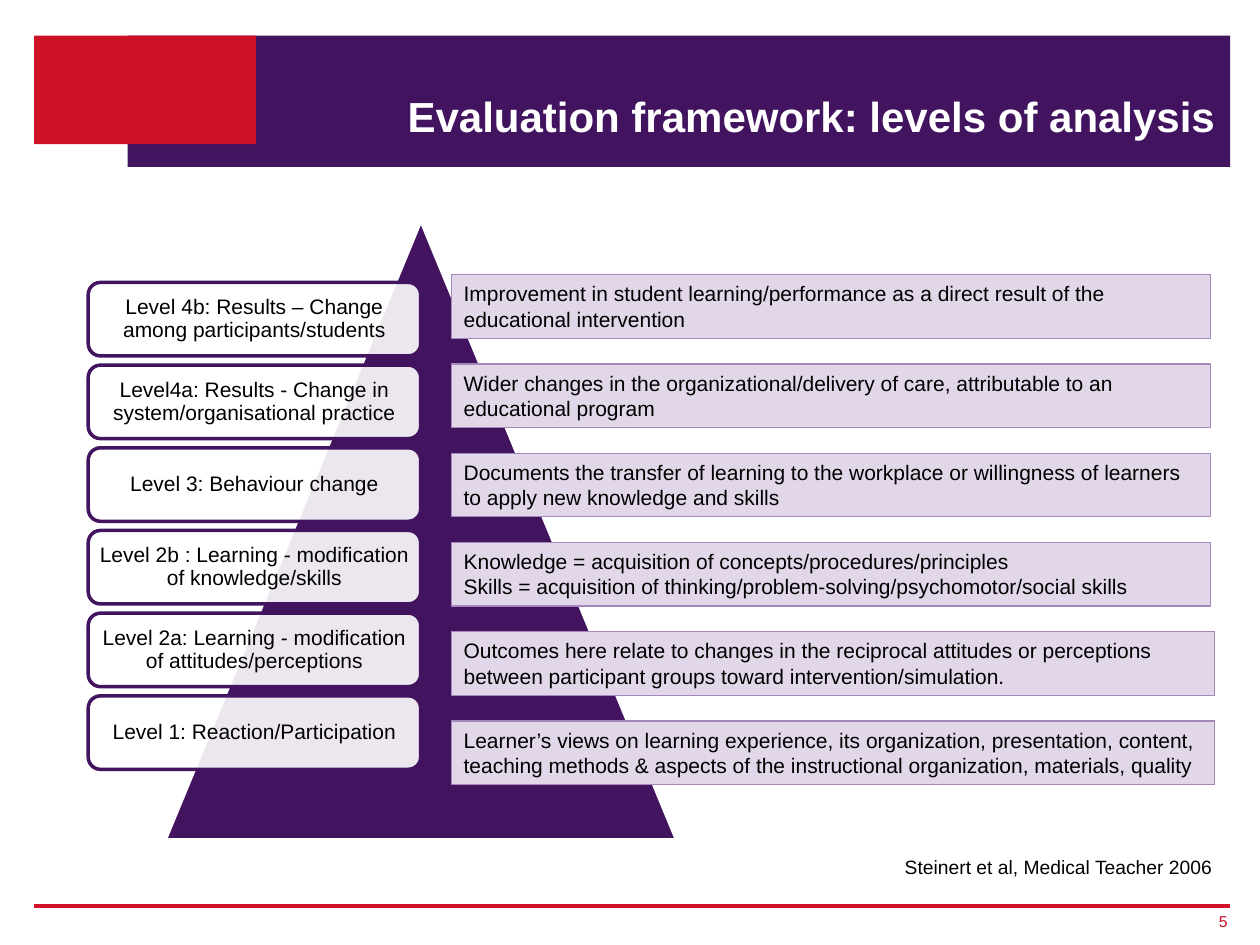
from lxml import etree
from pptx import Presentation
from pptx.dml.color import RGBColor
from pptx.enum import shapes, text
from pptx.oxml import ns
from pptx.util import Pt

HUES = {"plum": "42145F", "red": "CE1126", "lilac": "E1D7E8",
        "mauve": "A587B9", "white": "FFFFFF", "black": "000000"}
KIND = shapes.MSO_SHAPE
ALIGN = text.PP_ALIGN
MID = text.MSO_ANCHOR.MIDDLE
LEVELS = [
    ("Level 4b: Results – Change among participants/students",
     ["Improvement in student learning/performance as a direct result of the educational intervention"]),
    ("Level4a: Results - Change in system/organisational practice",
     ["Wider changes in the organizational/delivery of care, attributable to an educational program"]),
    ("Level 3: Behaviour change",
     ["Documents the transfer of learning to the workplace or willingness of learners to apply new knowledge and skills"]),
    ("Level 2b : Learning - modification of knowledge/skills",
     ["Knowledge = acquisition of concepts/procedures/principles",
      "Skills = acquisition of thinking/problem-solving/psychomotor/social skills"]),
    ("Level 2a: Learning - modification of attitudes/perceptions",
     ["Outcomes here relate to changes in the reciprocal attitudes or perceptions between participant groups toward intervention/simulation."]),
    ("Level 1: Reaction/Participation",
     ["Learner’s views on learning experience, its organization, presentation, content, teaching methods & aspects of the instructional organization, materials, quality"]),
]


def color(name):
    return RGBColor.from_string(HUES[name])


def block(slide, kind, box, fill, edge=None, width=0):
    shape = slide.shapes.add_shape(kind, *map(Pt, box))
    shape.shadow.inherit = False
    shape.fill.solid()
    shape.fill.fore_color.rgb = color(fill)
    if edge:
        shape.line.color.rgb = color(edge)
        shape.line.width = Pt(width)
    else:
        shape.line.fill.background()
    return shape


def write(shape, lines, size=12, hue="black", align=ALIGN.LEFT, anchor=text.MSO_ANCHOR.TOP,
          inset=None, space=None, bold=False):
    frame = shape.text_frame
    frame.word_wrap = True
    frame.vertical_anchor = anchor
    if inset is not None:
        frame.margin_left = frame.margin_right = Pt(inset)
        frame.margin_top = frame.margin_bottom = Pt(inset)
    frame.text = "\n".join(lines)
    for para in frame.paragraphs:
        para.alignment = align
        if space:
            para.line_spacing = space
        font = para.font
        font.name, font.size, font.bold = "Arial", Pt(size), bold
        font.color.rgb = color(hue)


def label(slide, box, line, **style):
    write(slide.shapes.add_textbox(*map(Pt, box)), [line], align=ALIGN.RIGHT, **style)


def header(slide, box):
    x, y, w, h = box
    block(slide, KIND.RECTANGLE, (x + 53.5, y, w - 53.5, h), "plum")
    block(slide, KIND.RECTANGLE, (x, y, 126.7, 62), "red")
    label(slide, (x + 128, y + 13.5, w - 129.5, 50), "Evaluation framework: levels of analysis",
          size=24, hue="white", anchor=text.MSO_ANCHOR.BOTTOM, space=Pt(25), bold=True)


def pyramid(slide, box):
    x, y, w, h = box
    block(slide, KIND.ISOSCELES_TRIANGLE, (x + 44, y, 292.3, h), "plum", "white", 2)
    for i, (name, notes) in enumerate(LEVELS):
        card = block(slide, KIND.ROUNDED_RECTANGLE, (x, y + 35.4 + i * 47.25, 190, 42),
                     "white", "plum", 2)
        tint = card.fill._xPr.find(ns.qn("a:solidFill"))[0]
        etree.SubElement(tint, ns.qn("a:alpha"), val="90000")
        write(card, [name], align=ALIGN.CENTER, anchor=MID, inset=3.6, space=0.9)
    for i, (name, notes) in enumerate(LEVELS):
        wide = w - 207.5 - (2.5 if i < 4 else 0)
        note = block(slide, KIND.RECTANGLE, (x + 207.5, y + 31 + i * 51, wide, 36.3),
                     "lilac", "mauve", 0.75)
        write(note, notes)


def footer(slide, box):
    x, y, w, h = box
    label(slide, (x + 459.5, y, 221, 21), "Steinert et al, Medical Teacher 2006", size=11)
    rule = slide.shapes.add_connector(shapes.MSO_CONNECTOR.STRAIGHT,
                                      Pt(x), Pt(y + 32.4), Pt(x + w), Pt(y + 32.4))
    rule.line.color.rgb = color("red")
    rule.line.width = Pt(2.25)
    etree.SubElement(rule._element.spPr, ns.qn("a:effectLst"))
    label(slide, (x + w - 21, y + h - 16.5, 19.5, 16.5), "5",
          size=9, hue="red", anchor=MID, inset=0)


def main():
    deck = Presentation()
    deck.slide_width, deck.slide_height = Pt(720), Pt(540)
    slide = deck.slides.add_slide(deck.slide_layouts[6])
    header(slide, (19.5, 20.4, 683.5, 75))
    pyramid(slide, (50.4, 126, 643.7, 354))
    footer(slide, (19.5, 485.3, 683.5, 49.6))
    deck.save("out.pptx")


if __name__ == "__main__":
    main()
